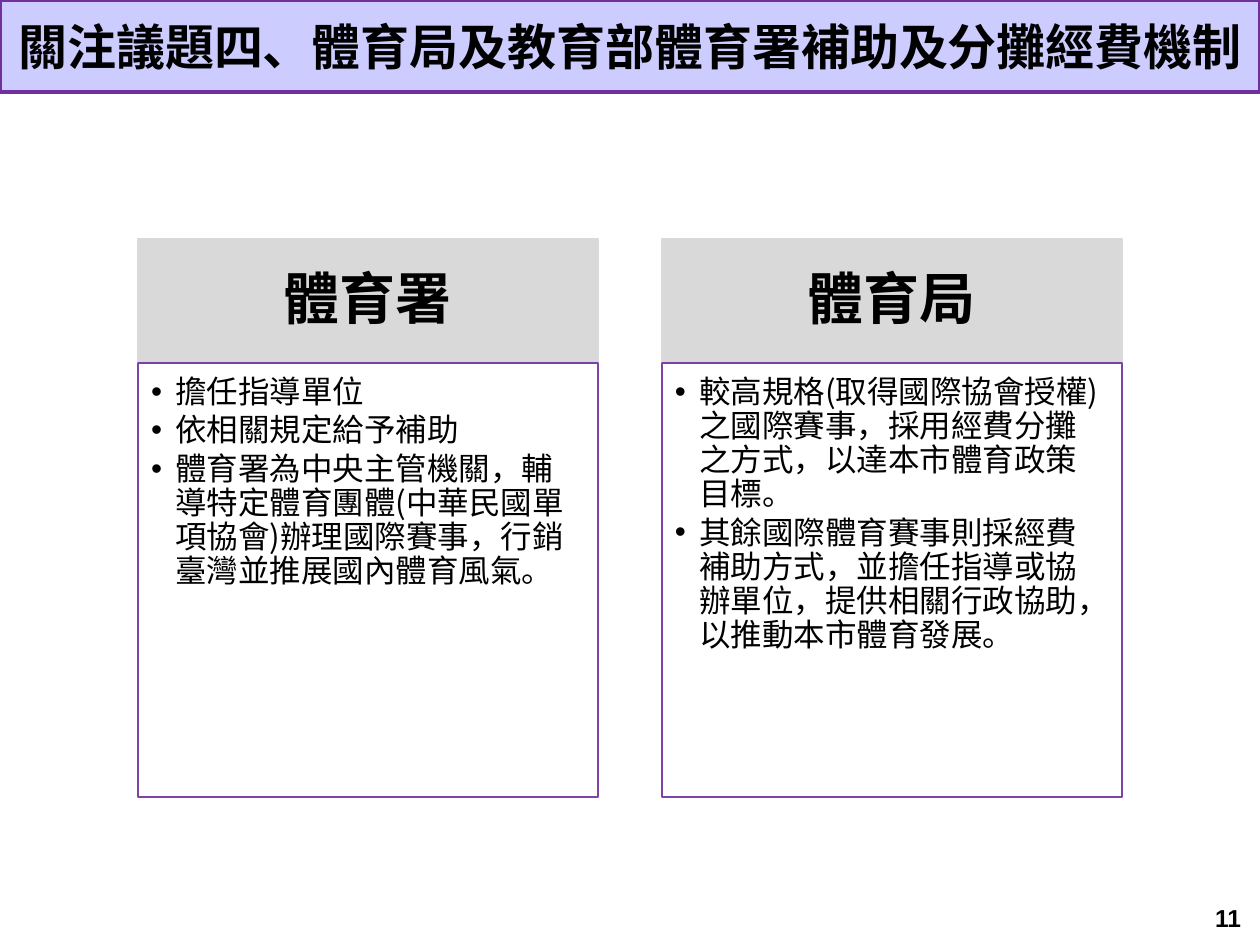
from dataclasses import dataclass

from lxml import etree
from pptx import Presentation
from pptx.dml.color import RGBColor
from pptx.enum.shapes import MSO_SHAPE
from pptx.enum.text import MSO_ANCHOR, PP_ALIGN
from pptx.oxml.ns import qn
from pptx.util import Emu, Pt

RECTANGLE = MSO_SHAPE.RECTANGLE
TOP, MIDDLE = MSO_ANCHOR.TOP, MSO_ANCHOR.MIDDLE
LEFT, CENTER, RIGHT = PP_ALIGN.LEFT, PP_ALIGN.CENTER, PP_ALIGN.RIGHT

PX_PER_INCH = 126
CJK_FONT = "Noto Sans CJK SC"
NUMBER_FONT = "Arial"
COLORS = {
    "text": "000000",
    "title": "CCCCFF",
    "accent": "7030A0",
    "header": "D9D9D9",
    "body": "FFFFFF",
}

SLIDE_W, SLIDE_H = 1260, 945
TITLE_H = 92
COLUMN_LEFT, COLUMN_W, COLUMN_STEP = 138, 460, 524
HEADER_TOP, HEADER_H, BODY_H = 239, 124, 434
BULLET_INDENT = 24


@dataclass(frozen=True)
class Box:
    left: int
    top: int
    width: int
    height: int


@dataclass(frozen=True)
class Agency:
    name: str
    duties: tuple[str, ...]


AGENCIES = (
    Agency("體育署", (
        "擔任指導單位",
        "依相關規定給予補助",
        "體育署為中央主管機關，輔導特定體育團體(中華民國單項協會)辦理國際賽事，行銷臺灣並推展國內體育風氣。",
    )),
    Agency("體育局", (
        "較高規格(取得國際協會授權)之國際賽事，採用經費分攤之方式，以達本市體育政策目標。",
        "其餘國際體育賽事則採經費補助方式，並擔任指導或協辦單位，提供相關行政協助，以推動本市體育發展。",
    )),
)


def px(length: int) -> Emu:
    return Emu(round(length * 914400 / PX_PER_INCH))


def place(box: Box) -> tuple[Emu, ...]:
    return px(box.left), px(box.top), px(box.width), px(box.height)


def add_panel(slide, box: Box, fill: str, line: str, line_width: int = 1, opacity: int = 100):
    panel = slide.shapes.add_shape(RECTANGLE, *place(box))
    panel.shadow.inherit = False
    panel.fill.solid()
    panel.fill.fore_color.rgb = RGBColor.from_string(COLORS[fill])
    panel.line.color.rgb = RGBColor.from_string(COLORS[line])
    panel.line.width = Pt(line_width)
    if opacity < 100:
        for color in panel.element.spPr.iter(qn("a:srgbClr")):
            etree.SubElement(color, qn("a:alpha"), val=str(opacity * 1000))
    return panel


def add_bullet(paragraph) -> None:
    properties = paragraph._p.get_or_add_pPr()
    properties.set("marL", str(px(BULLET_INDENT)))
    properties.set("indent", str(-px(BULLET_INDENT)))
    etree.SubElement(properties, qn("a:buFont"), typeface=NUMBER_FONT)
    etree.SubElement(properties, qn("a:buChar"), char="•")


def write(holder, *lines: str, size: int, font: str = CJK_FONT, bold: bool = False,
          align=CENTER, anchor=MIDDLE, insets: tuple[int, ...] = (13, 6, 13, 6),
          spacing: float = 1.0, after: float = 0, bullets: bool = False) -> None:
    frame = holder.text_frame
    frame.word_wrap = True
    frame.vertical_anchor = anchor
    frame.margin_left, frame.margin_top, frame.margin_right, frame.margin_bottom = map(px, insets)
    for index, line in enumerate(lines):
        paragraph = frame.add_paragraph() if index else frame.paragraphs[0]
        paragraph.alignment = align
        paragraph.line_spacing = spacing
        paragraph.space_after = Pt(after)
        if bullets:
            add_bullet(paragraph)
        run = paragraph.add_run()
        run.text = line
        run.font.size = Pt(size)
        run.font.bold = bold
        run.font.name = font
        run.font.color.rgb = RGBColor.from_string(COLORS["text"])
        etree.SubElement(run.font._element, qn("a:ea"), typeface=font)


def add_agency(slide, agency: Agency, left: int) -> None:
    header = add_panel(slide, Box(left, HEADER_TOP, COLUMN_W, HEADER_H), "header", "header")
    write(header, agency.name, size=32, bold=True, insets=(32, 18, 32, 18), spacing=0.9)
    body = add_panel(slide, Box(left, HEADER_TOP + HEADER_H, COLUMN_W, BODY_H),
                     "body", "accent", opacity=90)
    write(body, *agency.duties, size=18, align=LEFT, anchor=TOP, insets=(13, 13, 18, 20),
          spacing=0.9, after=2.7, bullets=True)


def main() -> None:
    deck = Presentation()
    deck.slide_width, deck.slide_height = px(SLIDE_W), px(SLIDE_H)
    slide = deck.slides.add_slide(deck.slide_layouts[6])

    page_number = slide.shapes.add_textbox(*place(Box(960, 893, 294, 50)))
    write(page_number, "11", size=14, font=NUMBER_FONT, bold=True, align=RIGHT)

    title = add_panel(slide, Box(0, 0, SLIDE_W, TITLE_H), "title", "accent", line_width=2)
    write(title, "關注議題四、體育局及教育部體育署補助及分攤經費機制", size=28, bold=True)

    for column, agency in enumerate(AGENCIES):
        add_agency(slide, agency, COLUMN_LEFT + column * COLUMN_STEP)

    deck.save("out.pptx")


if __name__ == "__main__":
    main()
